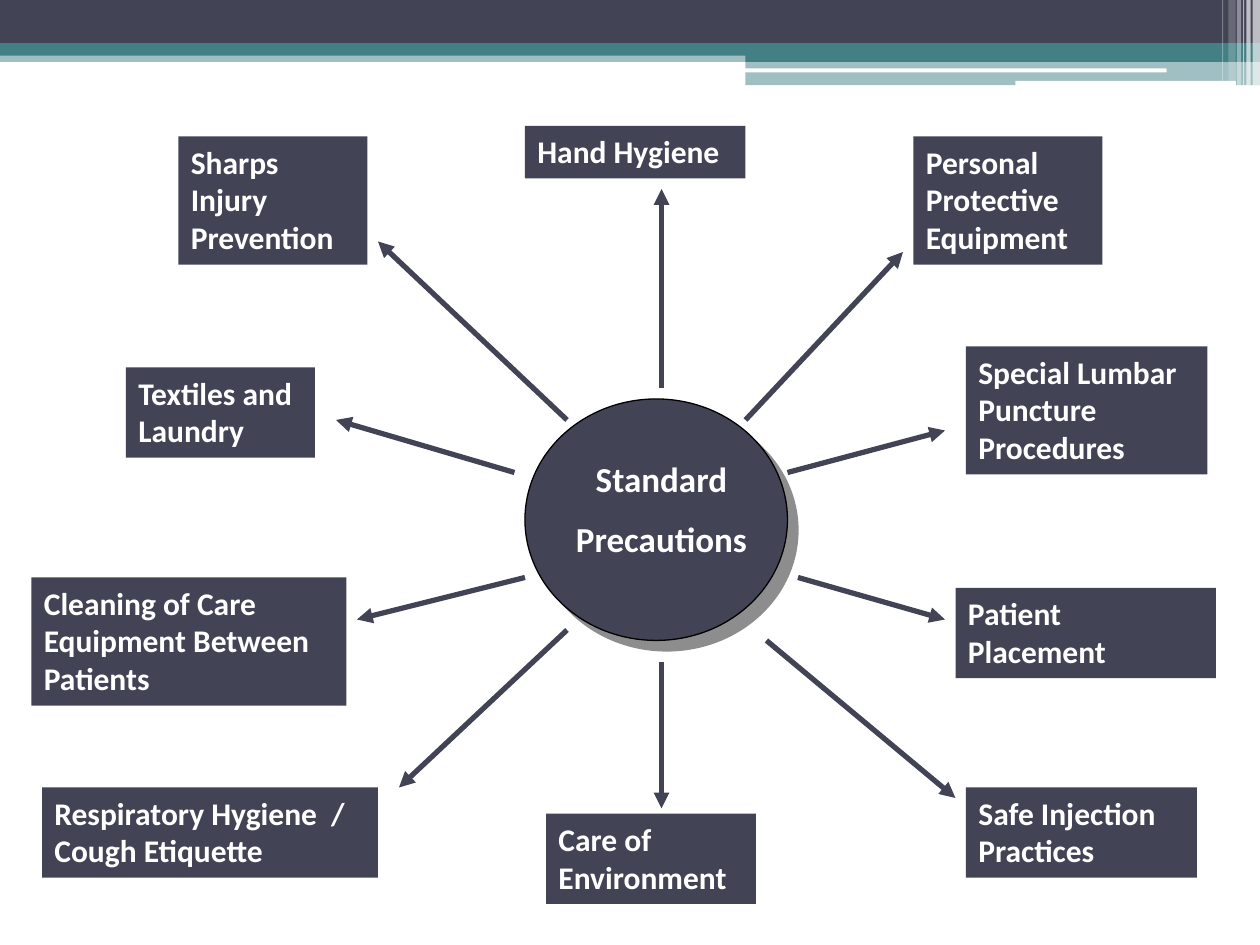
from lxml import etree
from pptx import Presentation, util as u
from pptx.dml.color import RGBColor
from pptx.enum import shapes, text
from pptx.oxml import ns

PX = 7620
NAVY, TEAL, WHITE = "424456", "438086", "FFFFFF"
KIND = shapes.MSO_SHAPE

BANDS = [
    (KIND.RECTANGLE, 0, 48, 1200, 11, TEAL, 50),
    (KIND.RECTANGLE, 0, 0, 1200, 41, NAVY, 100),
    (KIND.RECTANGLE, 0, 41, 1200, 12, TEAL, 100),
    (KIND.RECTANGLE, 710, 47, 490, 12, TEAL, 100),
    (KIND.RECTANGLE, 710, 58, 490, 23, TEAL, 50),
    (KIND.ROUNDED_RECTANGLE, 709, 65, 402, 4, WHITE, 100),
    (KIND.ROUNDED_RECTANGLE, 967, 77, 210, 5, WHITE, 100),
]
STRIPES = [(1193, 7, 81, 65), (1187, 4, 81, 65), (1184, 1, 81, 60),
           (1178, 4, 81, 40), (1170, 7, 77, 20), (1164, 1, 77, 30)]

TOPICS = [
    ("Hand Hygiene", 1, (500, 0, 210), (630, 250, 630, 60)),
    ("Personal Protective Equipment", 3, (870, 10, 180), (710, 280, 860, 120)),
    ("Special Lumbar Puncture Procedures", 3, (920, 210, 230), (750, 330, 900, 290)),
    ("Patient Placement", 2, (910, 440, 248), (760, 430, 900, 470)),
    ("Safe Injection\nPractices", 2, (920, 630, 220), (730, 490, 910, 640)),
    ("Care of Environment", 2, (520, 655, 200), (630, 510, 630, 650)),
    ("Respiratory Hygiene  /\nCough Etiquette", 2, (40, 630, 320), (540, 480, 380, 630)),
    ("Cleaning of Care Equipment Between Patients", 3, (30, 430, 300), (500, 430, 340, 470)),
    ("Textiles and Laundry", 2, (120, 230, 180), (490, 330, 320, 280)),
    ("Sharps Injury Prevention", 3, (170, 10, 180), (540, 280, 360, 110)),
]


def color(code):
    """Turn a hex string into a colour."""
    return RGBColor.from_string(code)


def emu(*vals):
    """Scale px lengths to EMU."""
    return [u.Emu(v * PX) for v in vals]


def node(parent, tag, **attrs):
    """Append a drawing element to its parent."""
    return etree.SubElement(parent, ns.qn(tag), {k: str(v) for k, v in attrs.items()})


def block(slide, kind, x, y, w, h, fill, alpha=100):
    """Add a filled shape with no outline or shadow."""
    shape = slide.shapes.add_shape(kind, *emu(x, y, w, h))
    shape.shadow.inherit = False
    shape.fill.solid()
    shape.fill.fore_color.rgb = color(fill)
    shape.line.fill.background()
    if alpha < 100:
        tone = shape.fill._xPr.find(".//" + ns.qn("a:srgbClr"))
        node(tone, "a:alpha", val=alpha * 1000)
    return shape


def write(shape, words, size, align, gap=0):
    """Fill a shape with bold white paragraphs."""
    frame = shape.text_frame
    frame.text = words
    frame.word_wrap = True
    frame.auto_size = text.MSO_AUTO_SIZE.SHAPE_TO_FIT_TEXT
    frame.vertical_anchor = text.MSO_ANCHOR.TOP
    for para in frame.paragraphs:
        para.alignment = align
        para.space_before = u.Pt(gap)
        font = para.font
        font.name, font.size, font.bold = "Calibri", u.Pt(size), True
        font.color.rgb = color(WHITE)


def arrow(slide, x1, y1, x2, y2):
    """Add a thick line with an arrowhead at its end."""
    link = slide.shapes.add_connector(shapes.MSO_CONNECTOR.STRAIGHT, *emu(x1, y1, x2, y2))
    link.line.color.rgb = color(NAVY)
    link.line.width = u.Pt(3)
    node(link.line._get_or_add_ln(), "a:tailEnd", type="triangle")
    node(link._element.spPr, "a:effectLst")


def header(slide, left, top):
    """Draw the bands and the fading stripes along the top."""
    for kind, x, y, w, h, fill, alpha in BANDS:
        block(slide, kind, left + x, top + y, w, h, fill, alpha)
    for x, w, h, alpha in STRIPES:
        block(slide, KIND.RECTANGLE, left + x, top, w, h, WHITE, alpha)


def hub(slide, left, top):
    """Draw the shadowed central disc and its label."""
    disc = block(slide, KIND.OVAL, left, top, 250, 230, NAVY)
    disc.line.color.rgb = color("000000")
    disc.line.width = u.Pt(0.75)
    effects = disc._element.spPr.find(ns.qn("a:effectLst"))
    shade = node(effects, "a:outerShdw", dist=u.Pt(8.5), dir=45 * 60000,
                 algn="ctr", rotWithShape=0)
    node(node(shade, "a:srgbClr", val="1C1C1C"), "a:alpha", val=50000)
    label = slide.shapes.add_textbox(*emu(left + 10, top + 50, 240, 113))
    write(label, "Standard\nPrecautions", 20, text.PP_ALIGN.CENTER, 10)


def web(slide, left, top):
    """Draw the hub with an arrow to each topic box."""
    hub(slide, left + 500, top + 260)
    for words, lines, (x, y, w), (x1, y1, x2, y2) in TOPICS:
        box = block(slide, KIND.RECTANGLE, left + x, top + y, w, 14 + 36 * lines, NAVY)
        write(box, words, 18, text.PP_ALIGN.LEFT)
        arrow(slide, left + x1, top + y1, left + x2, top + y2)


def main():
    """Build and save the slide."""
    deck = Presentation()
    deck.slide_width, deck.slide_height = emu(1200, 900)
    slide = deck.slides.add_slide(deck.slide_layouts[6])
    header(slide, 0, 0)
    web(slide, 0, 120)
    deck.save("out.pptx")


if __name__ == "__main__":
    main()
